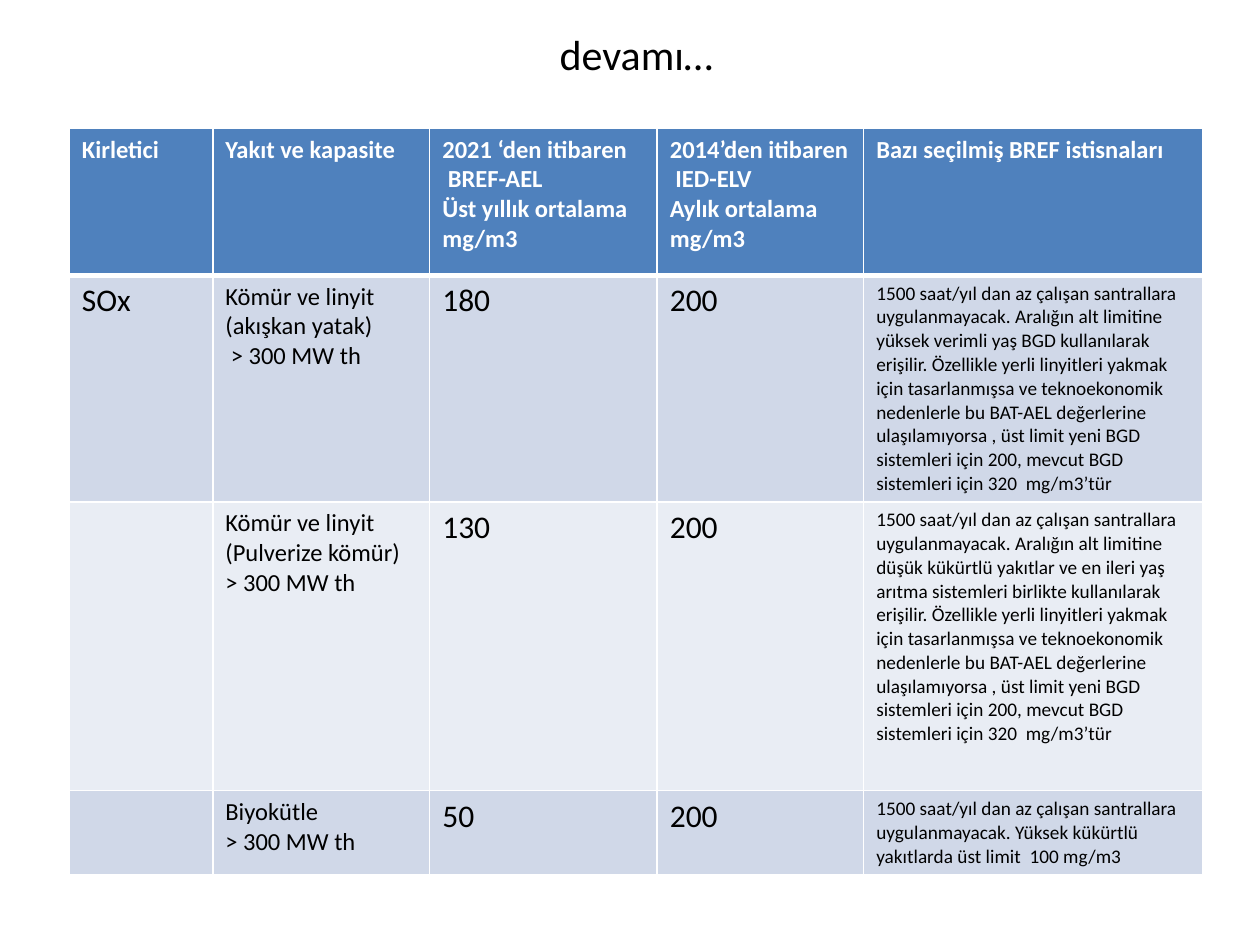
"""Build the SOx emission limit table slide."""
from dataclasses import dataclass

from lxml import etree
from pptx import Presentation
from pptx import util as u
from pptx.dml.color import RGBColor
from pptx.enum import text
from pptx.oxml import ns


@dataclass(frozen=True)
class Theme:
    """Colours, font and type sizes in points."""
    font: str = "Calibri"
    ink: str = "000000"
    paper: str = "FFFFFF"
    header: str = "4F81BD"
    bands: tuple = ("D0D8E8", "E9EDF4")
    title_size: int = 24
    header_size: int = 14
    body_sizes: tuple = (18, 14, 18, 18, 11)
    rule: int = 1
    header_rule: int = 3


class SlideBuilder:
    """Hold the theme and the current slide."""

    def __init__(self, presentation, theme):
        """Add a title-only slide."""
        self.theme = theme
        self.slide = presentation.slides.add_slide(presentation.slide_layouts[5])

    def set_text(self, frame, content, size, color, bold=False, align=text.PP_ALIGN.LEFT):
        """Set one paragraph for each line of content."""
        values = {"name": self.theme.font, "size": u.Pt(size), "bold": bold}
        frame.text = content
        for paragraph in frame.paragraphs:
            paragraph.alignment = align
            for name, value in values.items():
                setattr(paragraph.font, name, value)
            paragraph.font.color.rgb = RGBColor.from_string(color)

    def title(self, content, left, top, width, height):
        """Place and fill the title placeholder."""
        shape = self.slide.shapes.title
        box = {"left": left, "top": top, "width": width, "height": height}
        for name, value in box.items():
            setattr(shape, name, u.Pt(value))
        frame = shape.text_frame
        frame.auto_size = text.MSO_AUTO_SIZE.NONE
        frame.vertical_anchor = text.MSO_ANCHOR.MIDDLE
        self.set_text(frame, content, self.theme.title_size, self.theme.ink,
                      align=text.PP_ALIGN.CENTER)

    def borders(self, cell, top, bottom):
        """Draw the four borders of a cell."""
        properties = cell._tc.get_or_add_tcPr()
        widths = {"lnL": self.theme.rule, "lnR": self.theme.rule, "lnT": top, "lnB": bottom}
        for tag, width in widths.items():
            line = etree.SubElement(properties, ns.qn(f"a:{tag}"), w=str(u.Pt(width)))
            fill = etree.SubElement(line, ns.qn("a:solidFill"))
            etree.SubElement(fill, ns.qn("a:srgbClr"), val=self.theme.paper)

    def cell(self, cell, content, row, column):
        """Format a header or banded body cell."""
        theme = self.theme
        is_header = row == 0
        self.borders(cell, theme.header_rule if row == 1 else theme.rule,
                     theme.header_rule if is_header else theme.rule)
        cell.fill.solid()
        fill = theme.header if is_header else theme.bands[(row - 1) % 2]
        cell.fill.fore_color.rgb = RGBColor.from_string(fill)
        size = theme.header_size if is_header else theme.body_sizes[column]
        color = theme.paper if is_header else theme.ink
        self.set_text(cell.text_frame, content, size, color, bold=is_header)

    def table(self, rows, left, top, widths, heights):
        """Add a table with the given column widths and row heights."""
        table = self.slide.shapes.add_table(
            len(rows), len(widths), u.Pt(left), u.Pt(top),
            u.Pt(sum(widths)), u.Pt(sum(heights))).table
        for column, width in zip(table.columns, widths):
            column.width = u.Pt(width)
        for row, height in zip(table.rows, heights):
            row.height = u.Pt(height)
        for row, contents in enumerate(rows):
            for column, content in enumerate(contents):
                self.cell(table.cell(row, column), content, row, column)


SCOPE = "1500 saat/yıl dan az çalışan santrallara uygulanmayacak."
LIGNITE = (
    "kullanılarak erişilir. Özellikle yerli linyitleri yakmak için tasarlanmışsa "
    "ve teknoekonomik nedenlerle bu BAT-AEL değerlerine ulaşılamıyorsa , üst limit "
    "yeni BGD sistemleri için 200, mevcut BGD sistemleri için 320  mg/m3’tür")
ROWS = [
    ("Kirletici", "Yakıt ve kapasite",
     "2021 ‘den itibaren\n BREF-AEL\nÜst yıllık ortalama\nmg/m3",
     "2014’den itibaren\n IED-ELV\nAylık ortalama\nmg/m3",
     "Bazı seçilmiş BREF istisnaları"),
    ("SOx", "Kömür ve linyit\n(akışkan yatak)\n > 300 MW th", "180", "200",
     f"{SCOPE} Aralığın alt limitine yüksek verimli yaş BGD {LIGNITE}"),
    ("", "Kömür ve linyit\n(Pulverize kömür) > 300 MW th", "130", "200",
     f"{SCOPE} Aralığın alt limitine düşük kükürtlü yakıtlar ve en ileri yaş "
     f"arıtma sistemleri birlikte {LIGNITE}"),
    ("", "Biyokütle\n> 300 MW th", "50", "200",
     f"{SCOPE} Yüksek kükürtlü yakıtlarda üst limit  100 mg/m3"),
]


def main():
    """Build and save the presentation."""
    presentation = Presentation()
    presentation.slide_width, presentation.slide_height = u.Pt(720), u.Pt(540)
    builder = SlideBuilder(presentation, Theme())
    builder.title("devamı…", 39.6, 16.5, 648, 28)
    builder.table(ROWS, 39.6, 73.4, (82, 124, 130, 118, 194), (84, 129.5, 165, 47.5))
    presentation.save("out.pptx")


if __name__ == "__main__":
    main()
